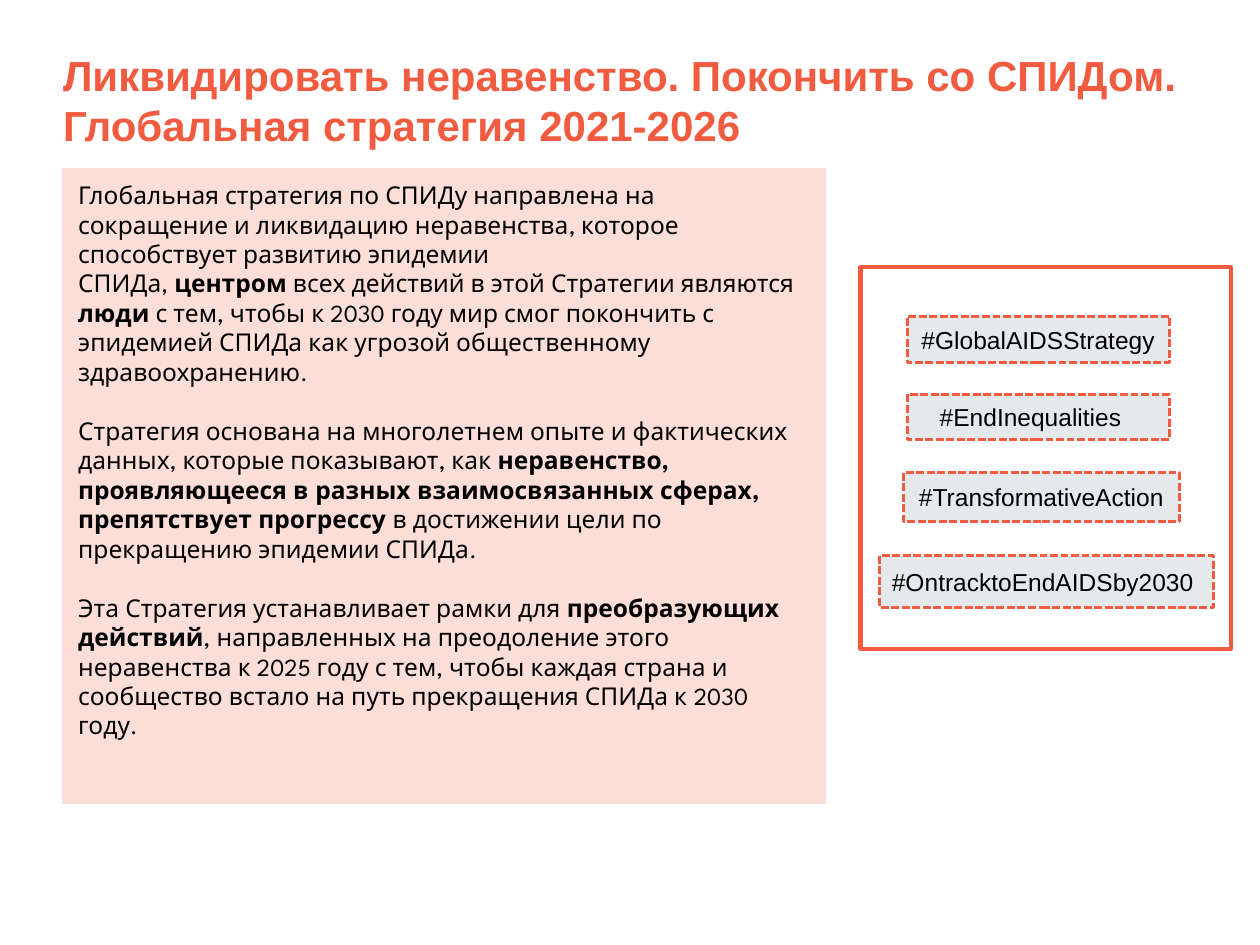
"""Build the slide on the Global AIDS Strategy 2021-2026."""
from lxml import etree
from pptx import Presentation
from pptx.dml.color import RGBColor
from pptx.enum.dml import MSO_LINE
from pptx.enum.shapes import MSO_SHAPE
from pptx.enum.text import MSO_ANCHOR, MSO_AUTO_SIZE, PP_ALIGN
from pptx.oxml.ns import qn
from pptx.util import Inches, Pt

RECTANGLE = MSO_SHAPE.RECTANGLE
DASHED = MSO_LINE.SQUARE_DOT
TOP, MIDDLE = MSO_ANCHOR.TOP, MSO_ANCHOR.MIDDLE
LEFT, CENTER = PP_ALIGN.LEFT, PP_ALIGN.CENTER
FIXED = MSO_AUTO_SIZE.NONE

THEME = {
    "accent": RGBColor.from_string("F15B40"),
    "panel": RGBColor.from_string("FCDED9"),
    "tag": RGBColor.from_string("E6E9EC"),
    "paper": RGBColor.from_string("FFFFFF"),
    "ink": RGBColor.from_string("000000"),
    "heading_font": "Arial",
    "body_font": "League Spartan",
    "heading_size": 24,
    "text_size": 14,
    "paragraph_gap": 17,
}

prs = Presentation()
prs.slide_width, prs.slide_height = Inches(10), Inches(7.5)
COLUMN, ROW = prs.slide_width / 100, prs.slide_height / 75


def write(shape, paragraphs, font, size=THEME["text_size"], color=THEME["ink"],
          bold=False, align=LEFT, anchor=TOP, margins=(0.1, 0.05, 0.1, 0.05), spaced=()):
    """Fill a shape with paragraphs; parts between asterisks are bold."""
    frame = shape.text_frame
    frame.word_wrap, frame.auto_size, frame.vertical_anchor = True, FIXED, anchor
    (frame.margin_left, frame.margin_top,
     frame.margin_right, frame.margin_bottom) = map(Inches, margins)
    for number, text in enumerate(paragraphs):
        paragraph = frame.add_paragraph() if number else frame.paragraphs[0]
        properties = paragraph._p.get_or_add_pPr()
        properties.set("marL", "0")
        properties.set("indent", "0")
        etree.SubElement(properties, qn("a:buNone"))
        paragraph.alignment = align
        paragraph.space_before = Pt(THEME["paragraph_gap"] if number in spaced else 0)
        for part, words in enumerate(text.split("*")):
            run = paragraph.add_run()
            run.text = words
            run.font.name, run.font.size = font, Pt(size)
            run.font.bold = bold or part % 2 == 1
            run.font.color.rgb = color


def place(shape, left, top, width, height, fill=None, line=None, weight=1):
    """Set a shape on the grid of columns and rows and paint it."""
    shape.left, shape.width = round(left * COLUMN), round(width * COLUMN)
    shape.top, shape.height = round(top * ROW), round(height * ROW)
    if fill is not None:
        shape.fill.solid()
        shape.fill.fore_color.rgb = fill
        shape.line.color.rgb = line
        shape.line.width = Pt(weight)
    return shape


slide = prs.slides.add_slide(prs.slide_layouts[1])

heading = place(slide.shapes.title, 4, 3.4, 92.3, 9.1)
write(heading, ["Ликвидировать неравенство. Покончить со СПИДом.",
                "Глобальная стратегия 2021-2026"],
      font=THEME["heading_font"], size=THEME["heading_size"],
      color=THEME["accent"], bold=True)

summary = place(slide.placeholders[1], 4.7, 13.1, 61.1, 50.9,
                THEME["panel"], THEME["paper"], 3)
write(summary, [
    "Глобальная стратегия по СПИДу направлена на сокращение и ликвидацию неравенства, "
    "которое способствует развитию эпидемии",
    "СПИДа, *центром* всех действий в этой Стратегии являются *люди* с тем, чтобы "
    "к 2030 году мир смог покончить с эпидемией СПИДа как угрозой общественному "
    "здравоохранению.",
    "Стратегия основана на многолетнем опыте и фактических данных, которые показывают, "
    "как *неравенство, проявляющееся в разных взаимосвязанных сферах, препятствует "
    "прогрессу *в достижении цели по",
    "прекращению эпидемии СПИДа.",
    "Эта Стратегия устанавливает рамки для *преобразующих действий*, направленных на "
    "преодоление этого неравенства к 2025 году с тем, чтобы каждая страна и сообщество "
    "встало на путь прекращения СПИДа к 2030 году.",
], font=THEME["body_font"], margins=(0.15, 0.12, 0.15, 0.15), spaced=(2, 4))

hashtag_frame = place(slide.shapes.add_shape(RECTANGLE, 0, 0, 0, 0),
                      68.3, 21.2, 29.4, 30.3, THEME["paper"], THEME["accent"], 2.5)
hashtag_frame.shadow.inherit = False

hashtags = [
    ("#GlobalAIDSStrategy", (72, 25.1, 20.8, 3.7), CENTER, 0.1),
    ("#EndInequalities", (72, 31.3, 20.8, 3.6), CENTER, 0.22),
    ("#TransformativeAction", (71.7, 37.5, 21.9, 3.9), CENTER, 0.1),
    ("#OntracktoEndAIDSby2030", (69.8, 44.1, 26.5, 4.1), LEFT, 0.1),
]
for words, position, align, right_margin in hashtags:
    hashtag = place(slide.shapes.add_shape(RECTANGLE, 0, 0, 0, 0), *position,
                    THEME["tag"], THEME["accent"], 1.5)
    hashtag.shadow.inherit = False
    hashtag.line.dash_style = DASHED
    write(hashtag, [words], font=THEME["heading_font"], align=align, anchor=MIDDLE,
          margins=(0.1, 0.05, right_margin, 0.05))

prs.save("out.pptx")
